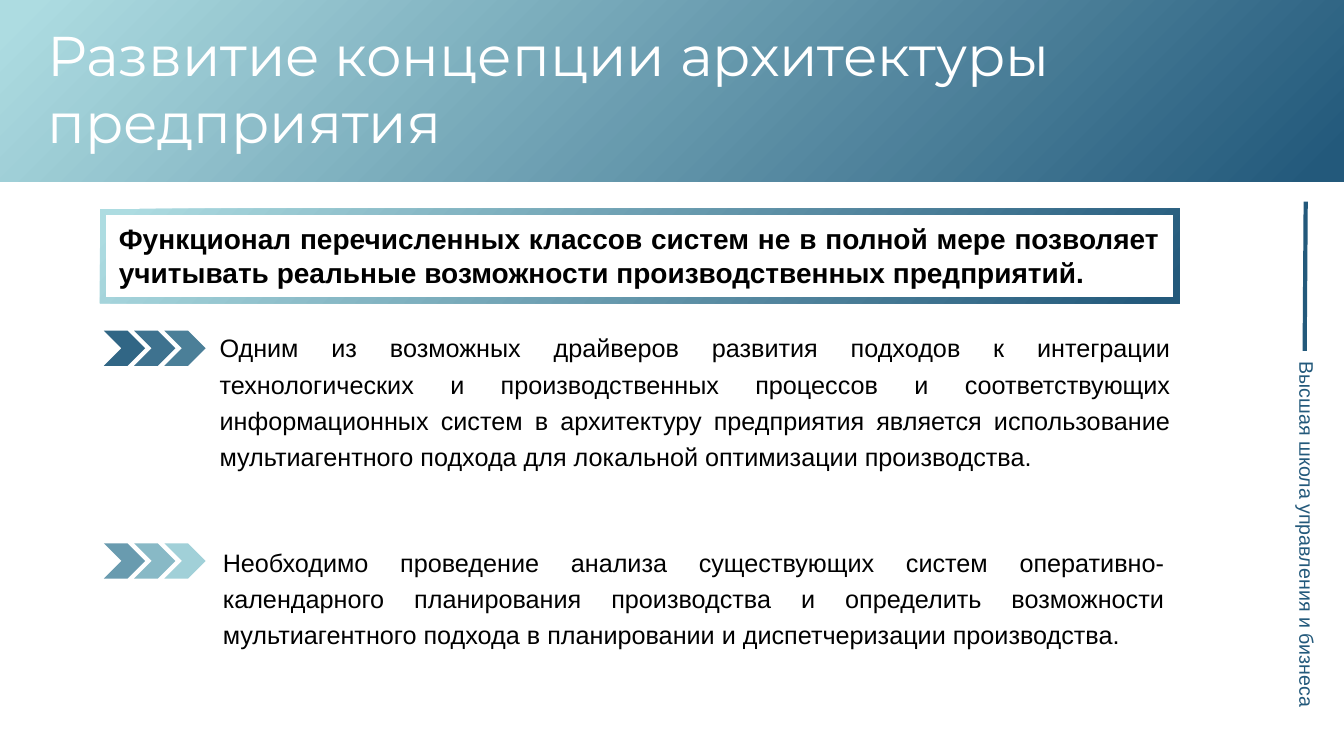
import pptx
import pptx.dml.color
import pptx.enum.dml
import pptx.enum.shapes
import pptx.enum.text
import pptx.oxml
import pptx.oxml.ns
import pptx.util
from pptx.util import Inches

NAVY, AQUA, WHITE, BLACK = "23597B", "ADDCE1", "FFFFFF", "000000"
SHAPES = pptx.enum.shapes.MSO_SHAPE
LEFT = pptx.enum.text.PP_ALIGN.LEFT
JUSTIFY = pptx.enum.text.PP_ALIGN.JUSTIFY

CHEVRON_LEFT, CHEVRON_STEP = 1.03, 0.3
CHEVRON_ROWS = [
    (3.28, ["316685", "3E728F", "4B7F98"]),
    (5.39, ["699BAF", "88B9C6", "A1D0D8"]),
]


def rgb(hex_color):
    return pptx.dml.color.RGBColor.from_string(hex_color)


def add_shape(page, kind, left, top, width, height, color=None):
    shape = page.shapes.add_shape(
        kind, Inches(left), Inches(top), Inches(width), Inches(height))
    shape.shadow.inherit = False
    shape.line.fill.background()
    if color:
        shape.fill.solid()
        shape.fill.fore_color.rgb = rgb(color)
    return shape


def fill_from_corner(shape):
    """Spread navy from the bottom right corner to aqua at the top left."""
    gradient = pptx.oxml.parse_xml(
        f'<a:gradFill {pptx.oxml.ns.nsdecls("a")} rotWithShape="1"><a:gsLst>'
        f'<a:gs pos="2000"><a:srgbClr val="{NAVY}"/></a:gs>'
        f'<a:gs pos="98000"><a:srgbClr val="{AQUA}"/></a:gs></a:gsLst>'
        '<a:path path="circle"><a:fillToRect l="100000" t="100000"/></a:path>'
        '</a:gradFill>')
    properties = shape.element.spPr
    properties.find(pptx.oxml.ns.qn("a:prstGeom")).addnext(gradient)


def write(shape, text, size, color, font="Arial", align=LEFT, bold=False,
          spacing=1.0, before=0, inset=None):
    frame = shape.text_frame
    frame.text = text
    frame.word_wrap = True
    frame.auto_size = pptx.enum.text.MSO_AUTO_SIZE.NONE
    frame.vertical_anchor = pptx.enum.text.MSO_ANCHOR.TOP
    if inset is not None:
        frame.margin_left = frame.margin_right = Inches(inset)
        frame.margin_top = frame.margin_bottom = Inches(inset)
    para = frame.paragraphs[0]
    para.alignment = align
    para.line_spacing = spacing
    para.space_before = pptx.util.Pt(before)
    span = para.runs[0]
    span.font.name = font
    span.font.size = pptx.util.Pt(size)
    span.font.bold = bold
    span.font.color.rgb = rgb(color)


def add_text(page, left, top, width, height, text, size, **style):
    box = page.shapes.add_textbox(
        Inches(left), Inches(top), Inches(width), Inches(height))
    write(box, text, size, BLACK, align=JUSTIFY, **style)


def add_header(page):
    title = page.shapes.title
    title.left, title.top = Inches(0.37), Inches(0.15)
    title.width, title.height = Inches(12.57), Inches(1.45)
    write(title, "Развитие концепции архитектуры предприятия", 40, WHITE,
          font="Montserrat")
    band = add_shape(page, SHAPES.RECTANGLE, 0, 0, 13.33, 1.8)
    fill_from_corner(band)
    title.element.addprevious(band.element)


def add_school_label(page):
    rule = page.shapes.add_connector(
        pptx.enum.shapes.MSO_CONNECTOR.STRAIGHT,
        Inches(12.95), Inches(2), Inches(12.94), Inches(3.48))
    rule.line.color.rgb = rgb(NAVY)
    rule.line.width = pptx.util.Pt(3)
    rule.element.spPr.append(pptx.oxml.parse_xml(
        f'<a:effectLst {pptx.oxml.ns.nsdecls("a")}/>'))
    label = add_shape(page, SHAPES.RECTANGLE, 11.1, 5.18, 3.72, 0.34, WHITE)
    label.rotation = 90
    write(label, "Высшая школа управления и бизнеса", 14, NAVY)


def add_key_message(page):
    frame = add_shape(page, SHAPES.FRAME, 0.99, 2.07, 10.71, 0.94)
    frame.adjustments[0] = 0.065
    fill_from_corner(frame)
    add_text(page, 1.08, 2.15, 10.52, 0.77,
             "Функционал перечисленных классов систем не в полной мере "
             "позволяет учитывать реальные возможности производственных "
             "предприятий.", 20, bold=True)


def add_chevrons(page, top, colors):
    for index, color in enumerate(colors):
        add_shape(page, SHAPES.CHEVRON, CHEVRON_LEFT + index * CHEVRON_STEP,
                  top, 0.41, 0.35, color)


def main():
    deck = pptx.Presentation()
    deck.slide_width, deck.slide_height = Inches(13.33), Inches(7.5)
    page = deck.slides.add_slide(deck.slide_layouts.get_by_name("Title Only"))
    add_header(page)
    add_school_label(page)
    add_key_message(page)
    for top, colors in CHEVRON_ROWS:
        add_chevrons(page, top, colors)
    add_text(page, 2.08, 3.19, 9.63, 1.52,
             "Одним из возможных драйверов развития подходов к интеграции "
             "технологических и производственных процессов и соответствующих "
             "информационных систем в архитектуру предприятия является "
             "использование мультиагентного подхода для локальной "
             "оптимизации производства.", 18, spacing=1.2, before=6)
    add_text(page, 2.16, 5.32, 9.44, 1.4,
             "Необходимо проведение анализа существующих систем "
             "оперативно-календарного планирования производства и определить "
             "возможности мультиагентного подхода в планировании и "
             "диспетчеризации производства.", 18, spacing=1.2, before=6,
             inset=0.05)
    deck.save("out.pptx")


if __name__ == "__main__":
    main()
